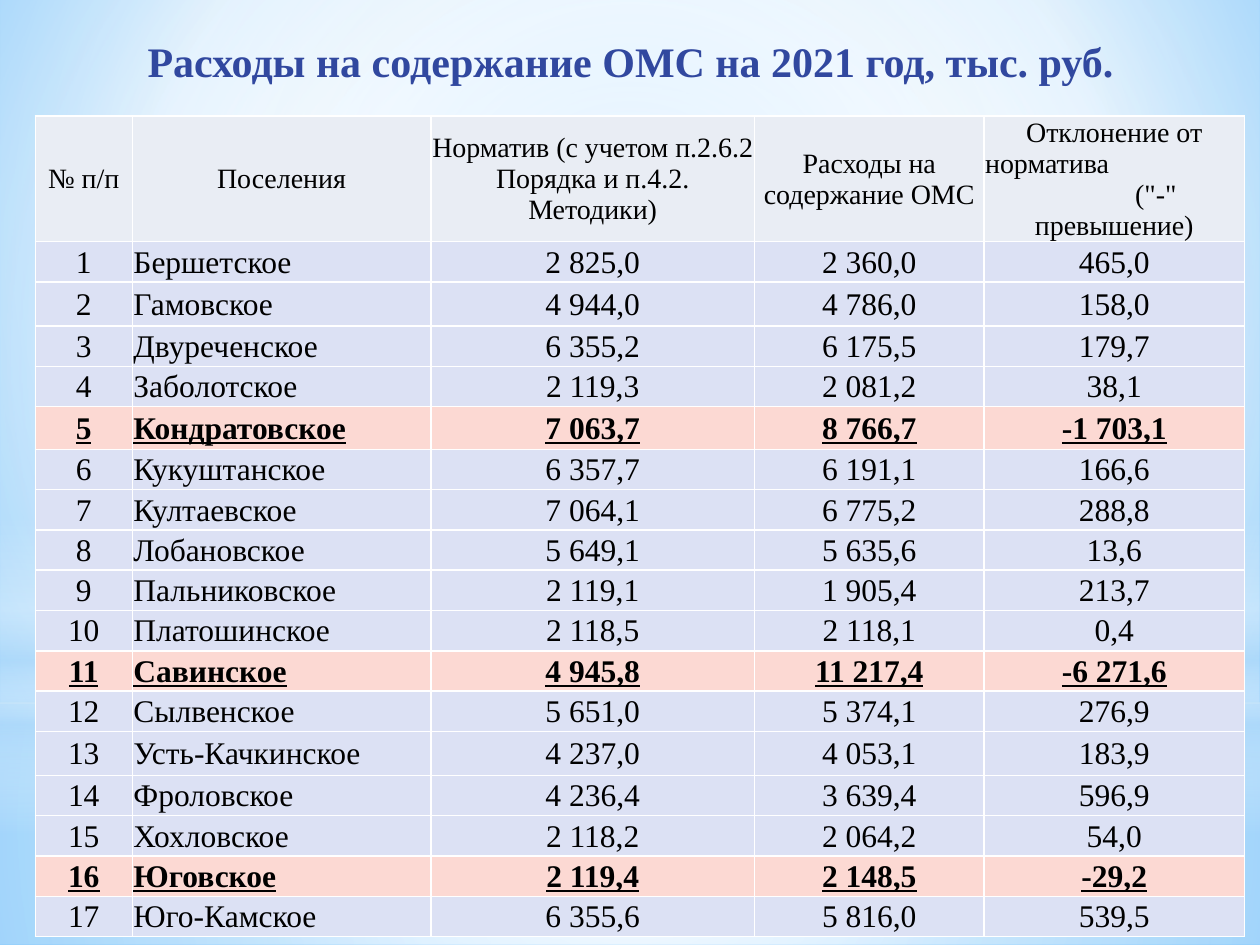
from lxml.etree import SubElement
from pptx import Presentation
from pptx.dml.color import RGBColor
from pptx.enum.shapes import MSO_SHAPE as Shape
from pptx.enum.text import MSO_ANCHOR as Anchor, MSO_AUTO_SIZE as Auto, PP_ALIGN as Align
from pptx.oxml import parse_xml
from pptx.oxml.ns import nsdecls, qn
from pptx.util import Pt

PX = 9144  # 100 px to the inch
FONT = "Times New Roman"
WHITE = RGBColor(0xFF, 0xFF, 0xFF)
BLACK = RGBColor(0, 0, 0)
NAVY = RGBColor(0x31, 0x48, 0x9F)
SKY = RGBColor(0x9E, 0xD5, 0xFF)
DEEP = RGBColor(0x5B, 0xB9, 0xFF)
PALE = RGBColor(0xB4, 0xDC, 0xFA)
GREY = RGBColor(0xE9, 0xED, 0xF4)
LILAC = RGBColor(0xDC, 0xE1, 0xF4)
PINK = RGBColor(0xFC, 0xD9, 0xD3)

TITLE = "Расходы на содержание ОМС на 2021 год, тыс. руб."
MID = (50, 50, 50, 50)
BACK = [(0, SKY, 100), (60, WHITE, 100), (100, DEEP, 100)]
# preset, box, stops (position, colour, opacity), focus or None for a vertical fade
GLOWS = [
    (Shape.RECTANGLE, (0, 558, 1000, 192),
     [(0, WHITE, 91), (37, WHITE, 76), (100, PALE, 79)], MID),
    (Shape.RECTANGLE, (0, 0, 1000, 558),
     [(0, WHITE, 89), (48, WHITE, 62), (100, PALE, 79)], MID),
    (Shape.RECTANGLE, (0, 412, 1000, 250),
     [(0, WHITE, 0), (29, WHITE, 30), (45, PALE, 40), (55, WHITE, 26),
      (65, PALE, 60), (100, WHITE, 0)], None),
    (Shape.OVAL, (0, 175, 1000, 558), [(0, WHITE, 100), (56, WHITE, 0)], MID),
]
HEADS = ["№ п/п", "Поселения",
         "Норматив (с учетом п.2.6.2 Порядка и п.4.2. Методики)",
         "Расходы на содержание ОМС"]
# text, alignment, left margin
LAST = [("Отклонение от", Align.CENTER, 0), ("норматива", Align.LEFT, 0),
        ('("-"', Align.CENTER, 66), ("превышение)", Align.CENTER, 0)]
ROWS = [
    ("Бершетское", "2 825,0", "2 360,0", "465,0"),
    ("Гамовское", "4 944,0", "4 786,0", "158,0"),
    ("Двуреченское", "6 355,2", "6 175,5", "179,7"),
    ("Заболотское", "2 119,3", "2 081,2", "38,1"),
    ("Кондратовское", "7 063,7", "8 766,7", "-1 703,1"),
    ("Кукуштанское", "6 357,7", "6 191,1", "166,6"),
    ("Култаевское", "7 064,1", "6 775,2", "288,8"),
    ("Лобановское", "5 649,1", "5 635,6", "13,6"),
    ("Пальниковское", "2 119,1", "1 905,4", "213,7"),
    ("Платошинское", "2 118,5", "2 118,1", "0,4"),
    ("Савинское", "4 945,8", "11 217,4", "-6 271,6"),
    ("Сылвенское", "5 651,0", "5 374,1", "276,9"),
    ("Усть-Качкинское", "4 237,0", "4 053,1", "183,9"),
    ("Фроловское", "4 236,4", "3 639,4", "596,9"),
    ("Хохловское", "2 118,2", "2 064,2", "54,0"),
    ("Юговское", "2 119,4", "2 148,5", "-29,2"),
    ("Юго-Камское", "6 355,6", "5 816,0", "539,5"),
]
COLS = [77, 237, 257, 182, 207]
HIGH, ROW = 95, 32
TALL = {2: 35, 5: 34, 13: 35}


def scale(box):
    return [n * PX for n in box]


def blend(fill, root, stops, focus):
    """Give the first gradient under root these stops, round a focus or downwards."""
    fill.gradient()
    old = root.find(".//" + qn("a:gradFill"))
    marks = "".join(
        f'<a:gs pos="{pos * 1000}"><a:srgbClr val="{tint}">'
        f'<a:alpha val="{alpha * 1000}"/></a:srgbClr></a:gs>'
        for pos, tint, alpha in stops)
    if focus:
        sides = " ".join(f'{s}="{n * 1000}"' for s, n in zip("ltrb", focus))
        way = f'<a:path path="circle"><a:fillToRect {sides}/></a:path>'
    else:
        way = '<a:lin ang="5400000" scaled="0"/>'
    new = parse_xml(f'<a:gradFill {nsdecls("a")} rotWithShape="1">'
                    f'<a:gsLst>{marks}</a:gsLst>{way}</a:gradFill>')
    old.getparent().replace(old, new)


def style(par, size, tint, bold=False, line=False):
    font = par.font
    font.name, font.size, font.bold, font.underline = FONT, Pt(size), bold, line
    font.color.rgb = tint


def write(cell, lines, size, tint, strong=False):
    """Fill a cell with (text, alignment, left margin) lines."""
    cell.margin_left = cell.margin_right = cell.margin_top = PX
    cell.margin_bottom = 0
    cell.vertical_anchor = Anchor.MIDDLE
    props = cell._tc.get_or_add_tcPr()
    for side in "LRTB":
        edge = SubElement(props, qn("a:ln" + side), w=str(Pt(1)))
        SubElement(SubElement(edge, qn("a:solidFill")), qn("a:srgbClr"), val=str(WHITE))
    cell.fill.solid()
    cell.fill.fore_color.rgb = tint
    frame = cell.text_frame
    for i, (text, align, left) in enumerate(lines):
        par = frame.add_paragraph() if i else frame.paragraphs[0]
        par.text, par.alignment = text, align
        if left:
            par._p.get_or_add_pPr().set("marL", str(left * PX))
        style(par, size, BLACK, strong, strong)


def main():
    deck = Presentation()
    deck.slide_width, deck.slide_height = scale((1000, 750))
    slide = deck.slides.add_slide(deck.slide_layouts[5])
    blend(slide.background.fill, slide._element, BACK, (20, 10, 20, 60))

    for kind, box, stops, focus in GLOWS:
        glow = slide.shapes.add_shape(kind, *scale(box))
        glow.shadow.inherit = False
        glow.line.fill.background()
        blend(glow.fill, glow._element, stops, focus)

    title = slide.shapes.title
    slide.shapes._spTree.append(title._element)  # in front of the glows
    title.left, title.top, title.width, title.height = scale((28, 21, 945, 54))
    frame = title.text_frame
    frame.text = TITLE
    frame.auto_size, frame.vertical_anchor = Auto.NONE, Anchor.MIDDLE
    frame.paragraphs[0].alignment = Align.CENTER
    style(frame.paragraphs[0], 24, NAVY, True)

    highs = [HIGH] + [TALL.get(i, ROW) for i in range(1, len(ROWS) + 1)]
    box = scale((28, 92, sum(COLS), sum(highs)))
    table = slide.shapes.add_table(len(highs), len(COLS), *box).table
    table.first_row = table.horz_banding = False
    for col, wide in zip(table.columns, COLS):
        col.width = wide * PX
    for row, high in zip(table.rows, highs):
        row.height = high * PX

    for c, head in enumerate(HEADS):
        write(table.cell(0, c), [(head, Align.CENTER, 0)], 16, GREY)
    write(table.cell(0, len(HEADS)), LAST, 16, GREY)
    for r, row in enumerate(ROWS, 1):
        over = row[-1].startswith("-")
        for c, text in enumerate((str(r), *row)):
            align = Align.LEFT if c == 1 else Align.CENTER
            write(table.cell(r, c), [(text, align, 0)], 18, PINK if over else LILAC, over)

    deck.save("out.pptx")


if __name__ == "__main__":
    main()
